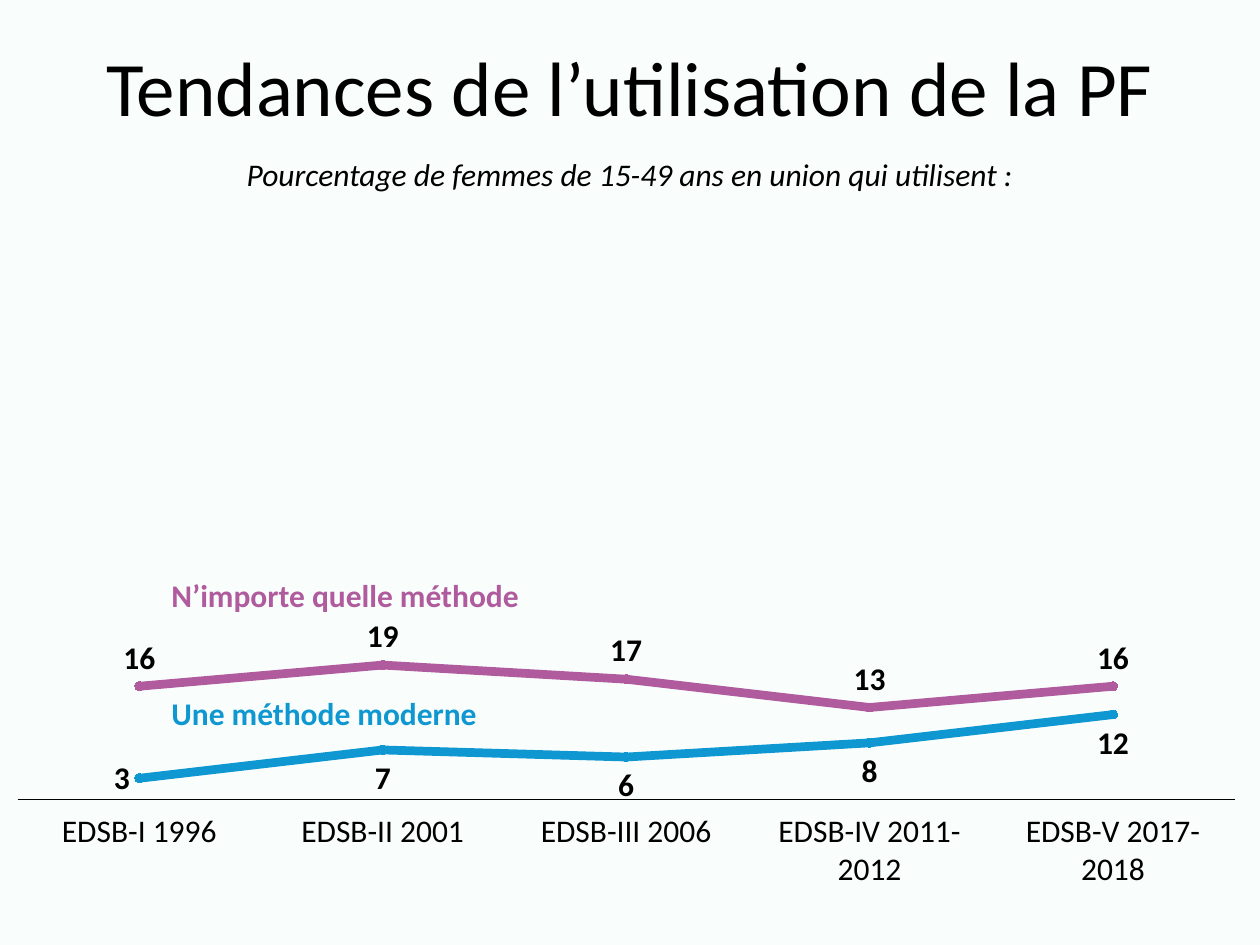
from lxml import etree
from pptx import Presentation
from pptx.chart.data import CategoryChartData
from pptx.dml.color import RGBColor
from pptx.enum.chart import (XL_CHART_TYPE, XL_LABEL_POSITION, XL_MARKER_STYLE,
                             XL_TICK_LABEL_POSITION, XL_TICK_MARK)
from pptx.enum.text import MSO_ANCHOR, MSO_AUTO_SIZE, PP_ALIGN
from pptx.oxml.ns import qn
from pptx.util import Emu, Pt

LINE_MARKERS = XL_CHART_TYPE.LINE_MARKERS
ABOVE, BELOW, LEFT_OF = (XL_LABEL_POSITION.ABOVE, XL_LABEL_POSITION.BELOW,
                         XL_LABEL_POSITION.LEFT)
CIRCLE = XL_MARKER_STYLE.CIRCLE
NO_TICK = XL_TICK_MARK.NONE
LABELS_LOW = XL_TICK_LABEL_POSITION.LOW
MIDDLE = MSO_ANCHOR.MIDDLE
GROW, NO_FIT = MSO_AUTO_SIZE.SHAPE_TO_FIT_TEXT, MSO_AUTO_SIZE.NONE
LEFT, CENTER = PP_ALIGN.LEFT, PP_ALIGN.CENTER

PX_PER_INCH = 126
BLACK, PURPLE, BLUE, MINT = "000000", "AF5B9E", "0E97D0", "F9FEFC"


def px(length):
    return Emu(round(length * 914400 / PX_PER_INCH))


def color(hex_code):
    return RGBColor.from_string(hex_code)


class SlideBuilder:
    font_name = "Calibri"
    body_size = 18
    title_size = 44

    def __init__(self, slide):
        self.slide = slide

    def style(self, font, size, hex_code=BLACK, bold=False, italic=False):
        font.name = self.font_name
        font.size = Pt(size)
        font.bold = bold
        font.italic = italic
        font.color.rgb = color(hex_code)

    def background(self, hex_code):
        fill = self.slide.background.fill
        fill.solid()
        fill.fore_color.rgb = color(hex_code)

    def title(self, text, box):
        title = self.slide.shapes.title
        title.left, title.top, title.width, title.height = map(px, box)
        frame = title.text_frame
        frame.auto_size = NO_FIT
        frame.vertical_anchor = MIDDLE
        paragraph = frame.paragraphs[0]
        paragraph.alignment = CENTER
        paragraph.line_spacing = 0.9
        run = paragraph.add_run()
        run.text = text
        self.style(run.font, self.title_size)

    def text(self, text, box, hex_code=BLACK, align=LEFT, **emphasis):
        frame = self.slide.shapes.add_textbox(*map(px, box)).text_frame
        frame.word_wrap = True
        frame.auto_size = GROW
        paragraph = frame.paragraphs[0]
        paragraph.alignment = align
        run = paragraph.add_run()
        run.text = text
        self.style(run.font, self.body_size, hex_code, **emphasis)

    def line_chart(self, categories, series, box, plot_box, maximum):
        data = CategoryChartData()
        data.categories = categories
        for name, values, _, _ in series:
            data.add_series(name, values)
        chart = self.slide.shapes.add_chart(LINE_MARKERS, *map(px, box), data).chart
        chart.has_title = False
        chart.has_legend = False
        self.style(chart.font, 10)

        # Axes
        years = chart.category_axis
        years.major_tick_mark = years.minor_tick_mark = NO_TICK
        years.tick_label_position = LABELS_LOW
        years.has_major_gridlines = False
        years.format.line.color.rgb = color(BLACK)
        years.format.line.width = Pt(0.75)
        self.style(years.tick_labels.font, self.body_size)
        percent = chart.value_axis
        percent.minimum_scale, percent.maximum_scale = 0, maximum
        percent.has_major_gridlines = False
        percent.visible = False

        # Lines, markers and value labels
        plot = chart.plots[0]
        plot.vary_by_categories = False
        for trend, (_, _, hex_code, position) in zip(plot.series, series):
            trend.smooth = False
            trend.format.line.color.rgb = color(hex_code)
            trend.format.line.width = Pt(5)
            marker = trend.marker
            marker.style, marker.size = CIRCLE, 5
            marker.format.fill.solid()
            marker.format.fill.fore_color.rgb = color(hex_code)
            marker.format.line.color.rgb = color(hex_code)
            labels = trend.data_labels
            labels.show_value = True
            labels.position = position
            self.style(labels.font, self.body_size, bold=True)

        self.plot_layout(chart, plot_box)
        return chart

    def move_label(self, trend, index, position):
        label = trend.points[index].data_label
        self.style(label.font, self.body_size, bold=True)
        label.position = position

    def plot_layout(self, chart, plot_box):
        area = chart.element.find(".//" + qn("c:plotArea"))
        for old in area.findall(qn("c:layout")):
            area.remove(old)
        layout = etree.Element(qn("c:layout"))
        manual = etree.SubElement(layout, qn("c:manualLayout"))
        settings = [("layoutTarget", "inner"), ("xMode", "edge"), ("yMode", "edge"),
                    *zip("xywh", plot_box)]
        for tag, value in settings:
            etree.SubElement(manual, qn("c:" + tag)).set("val", str(value))
        area.insert(0, layout)


def main():
    prs = Presentation()
    prs.slide_width, prs.slide_height = px(1260), px(945)
    builder = SlideBuilder(prs.slides.add_slide(prs.slide_layouts[5]))

    builder.background(MINT)
    builder.title("Tendances de l’utilisation de la PF", (0, 0, 1260, 183))

    # Trend chart
    surveys = ["EDSB-I 1996", "EDSB-II 2001", "EDSB-III 2006",
               "EDSB-IV 2011-2012", "EDSB-V 2017-2018"]
    trends = [("Series 1", (16, 19, 17, 13, 16), PURPLE, ABOVE),
              ("Series 2", (3, 7, 6, 8, 12), BLUE, BELOW)]
    chart = builder.line_chart(surveys, trends, (0, 222, 1260, 723),
                               (0.014, 0.065, 0.966, 0.734), maximum=75)
    builder.move_label(chart.plots[0].series[1], 0, LEFT_OF)

    # Line names and subtitle
    builder.text("N’importe quelle méthode", (159, 570, 433, 50), PURPLE, bold=True)
    builder.text("Une méthode moderne", (159, 688, 338, 50), BLUE, bold=True)
    builder.text("Pourcentage de femmes de 15-49 ans en union qui utilisent :",
                 (0, 149, 1260, 50), align=CENTER, italic=True)

    prs.save("out.pptx")


if __name__ == "__main__":
    main()
